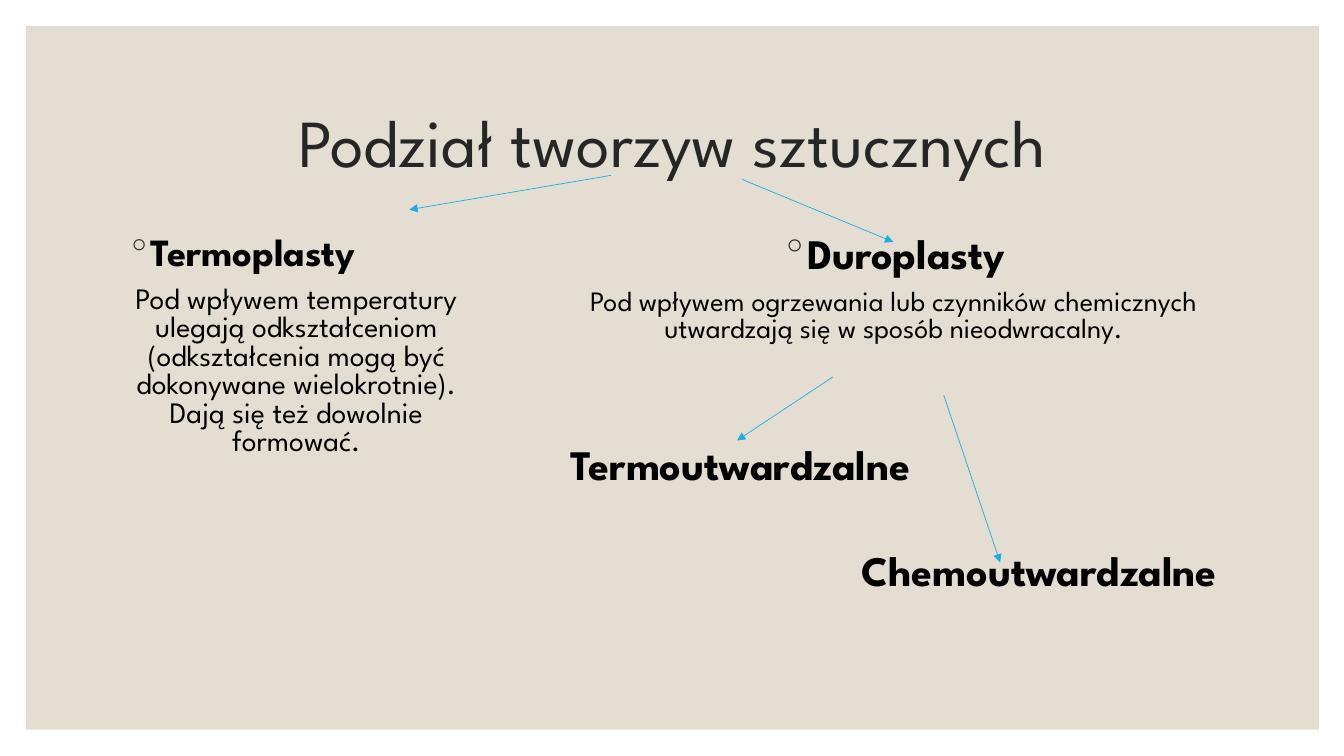
from pptx import Presentation
from pptx.dml.color import RGBColor
from pptx.enum.shapes import MSO_CONNECTOR, MSO_SHAPE
from pptx.enum.text import MSO_ANCHOR, PP_ALIGN
from pptx.oxml.ns import qn
from pptx.util import Inches, Pt
from lxml.etree import SubElement

FONT = "League Spartan"
SAND = RGBColor(0xE3, 0xDE, 0xD1)
DARK = RGBColor(0x26, 0x26, 0x26)
BLACK = RGBColor(0, 0, 0)
BLUE = RGBColor(0x1C, 0xAD, 0xE4)

LEFT, CENTER, RIGHT = PP_ALIGN.LEFT, PP_ALIGN.CENTER, PP_ALIGN.RIGHT

TITLE = [("Podział tworzyw sztucznych", dict(size=48, color=DARK, spacing=0.9))]
THERMOPLASTICS = [
    ("Termoplasty", dict(size=27.5, bold=True, align=LEFT, bullet="◦")),
    ("Pod wpływem temperatury ulegają odkształceniom (odkształcenia mogą być "
     "dokonywane wielokrotnie). Dają się też dowolnie formować.",
     dict(size=21.2, before=9)),
]
DUROPLASTICS = [
    ("Duroplasty", dict(size=30, bold=True, bullet="◦")),
    ("Pod wpływem ogrzewania lub czynników chemicznych utwardzają się "
     "w sposób nieodwracalny.", dict(size=20, before=9)),
    ("Termoutwardzalne", dict(size=30, bold=True, align=LEFT, before=75)),
    ("Chemoutwardzalne", dict(size=30, bold=True, align=RIGHT, before=47)),
]
BOXES = [
    ((1.17, 0.7, 11, 1.5), MSO_ANCHOR.MIDDLE, TITLE),
    ((1.17, 2.3, 3.54, 2.88), MSO_ANCHOR.TOP, THERMOPLASTICS),
    ((5.56, 2.3, 6.61, 4.1), MSO_ANCHOR.TOP, DUROPLASTICS),
]
ARROWS = [
    (6.06, 1.74, 4.06, 2.08),
    (7.36, 1.78, 8.86, 2.4),
    (8.26, 3.74, 7.31, 4.37),
    (9.36, 3.92, 9.92, 5.58),
]


def write(para, text, size, color=BLACK, bold=False, align=CENTER,
          spacing=0.8, before=0, bullet=None):
    para.alignment = align
    para.line_spacing = spacing
    para.space_before = Pt(before)
    if bullet:
        props = para._p.get_or_add_pPr()
        props.set("marL", str(Inches(0.2)))
        props.set("indent", str(-Inches(0.2)))
        tint = SubElement(props, qn("a:buClr"))
        SubElement(tint, qn("a:srgbClr")).set("val", str(DARK))
        SubElement(props, qn("a:buFont")).set("typeface", FONT)
        SubElement(props, qn("a:buChar")).set("char", bullet)
    span = para.add_run()
    span.text = text
    span.font.name = FONT
    span.font.size = Pt(size)
    span.font.bold = bold
    span.font.color.rgb = color


deck = Presentation()
deck.slide_width, deck.slide_height = Inches(13.33), Inches(7.5)
page = deck.slides.add_slide(deck.slide_layouts[6])

panel = page.shapes.add_shape(
    MSO_SHAPE.RECTANGLE, *map(Inches, (0.26, 0.26, 12.82, 6.98)))
panel.shadow.inherit = False
panel.fill.solid()
panel.fill.fore_color.rgb = SAND
panel.line.fill.background()

for place, anchor, lines in BOXES:
    frame = page.shapes.add_textbox(*map(Inches, place)).text_frame
    frame.word_wrap = True
    frame.vertical_anchor = anchor
    for index, (text, style) in enumerate(lines):
        para = frame.add_paragraph() if index else frame.paragraphs[0]
        write(para, text, **style)

for ends in ARROWS:
    arrow = page.shapes.add_connector(MSO_CONNECTOR.STRAIGHT, *map(Inches, ends))
    arrow.line.color.rgb = BLUE
    arrow.line.width = Pt(0.5)
    SubElement(arrow.line._get_or_add_ln(), qn("a:tailEnd")).set("type", "triangle")
    SubElement(arrow._element.spPr, qn("a:effectLst"))

deck.save("out.pptx")
